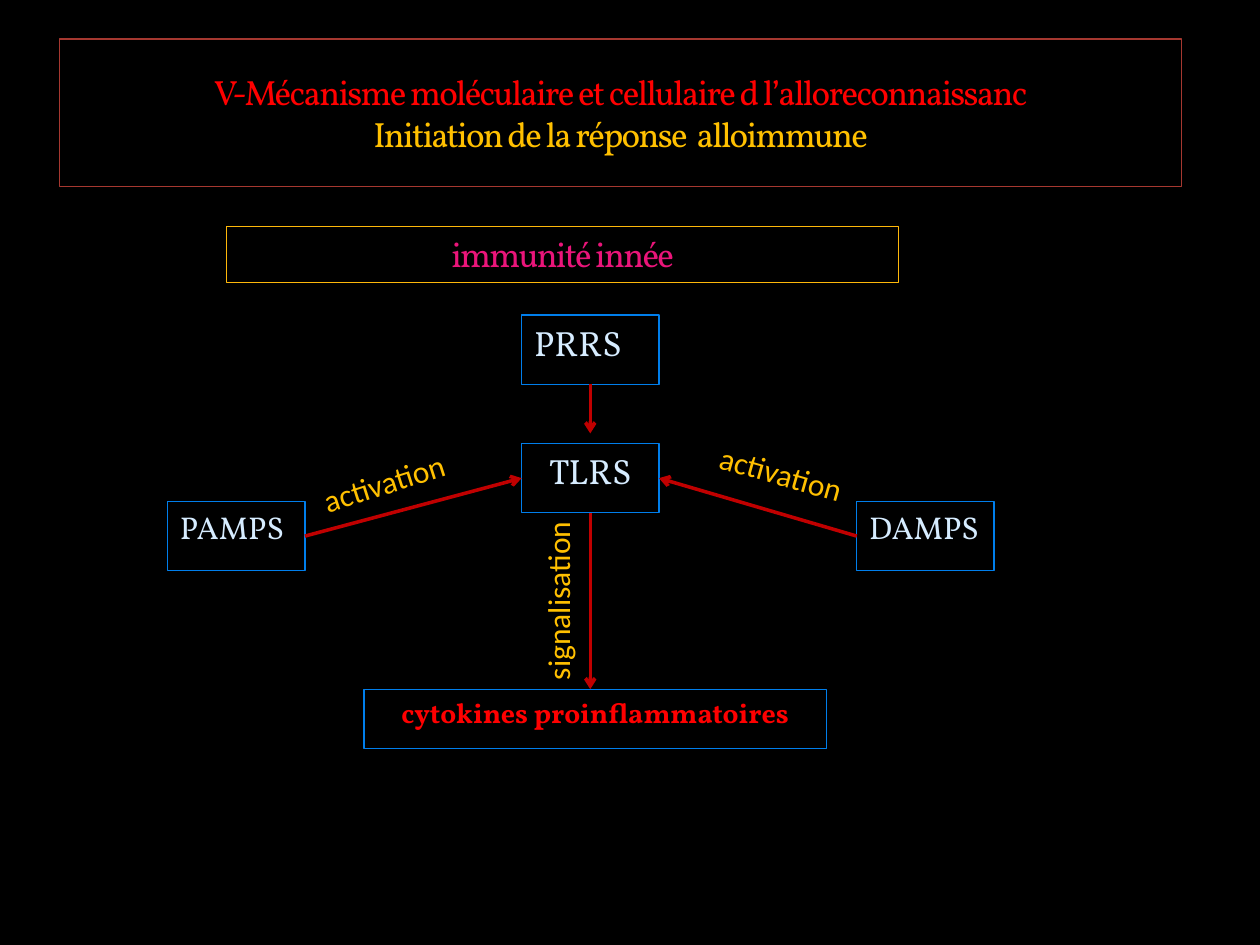
from dataclasses import dataclass

from lxml import etree
from pptx import Presentation, util as u
from pptx.dml.color import RGBColor
from pptx.enum import shapes, text
from pptx.oxml.ns import qn

COLUMNS, ROWS = 100, 75
CELL = u.Inches(0.1)
TOP, LEFT, BOTTOM, RIGHT = range(4)
CENTER, START = text.PP_ALIGN.CENTER, text.PP_ALIGN.LEFT


@dataclass(frozen=True)
class Theme:
    background: str = "000000"
    heading: str = "FF0000"
    accent: str = "FFC000"
    topic: str = "EA157A"
    receptor: str = "D6ECFF"
    box_line: str = "007EEB"
    title_line: str = "A63830"
    topic_line: str = "FEB80A"
    arrow: str = "C00000"
    serif: str = "Vollkorn"
    sans: str = "Calibri"
    large: int = 20
    medium: int = 18
    small: int = 16


THEME = Theme()


def cells(*counts):
    return [round(count * CELL) for count in counts]


def rgb(code):
    return RGBColor.from_string(code)


def write(paragraph, words, size, color, font=THEME.serif, align=START,
          bold=False, tight=False):
    """Add one run; tight draws the letters one point closer."""
    paragraph.alignment = align
    run = paragraph.add_run()
    run.text = words
    run.font.name = font
    run.font.size = u.Pt(size)
    run.font.bold = bold
    run.font.color.rgb = rgb(color)
    if tight:
        run.font._element.set("spc", "-100")


def add_box(slide, area, line=THEME.box_line, anchor=text.MSO_ANCHOR.TOP):
    box = slide.shapes.add_shape(shapes.MSO_SHAPE.RECTANGLE, *cells(*area))
    box.shadow.inherit = False
    box.fill.background()
    box.line.color.rgb = rgb(line)
    box.line.width = u.Pt(0.75)
    box.text_frame.word_wrap = True
    box.text_frame.vertical_anchor = anchor
    return box


def add_node(slide, area, words, size, color=THEME.receptor, **style):
    node = add_box(slide, area)
    write(node.text_frame.paragraphs[0], words, size, color, **style)
    return node


def add_arrow(slide, source, side, start, end, target=None, target_side=None):
    """Draw an arrow from a side of source, joined to target if there is one."""
    arrow = slide.shapes.add_connector(
        shapes.MSO_CONNECTOR.STRAIGHT, *cells(*start, *end))
    arrow.begin_connect(source, side)
    if target is not None:
        arrow.end_connect(target, target_side)
    arrow.line.color.rgb = rgb(THEME.arrow)
    arrow.line.width = u.Pt(2)
    etree.SubElement(arrow.line._get_or_add_ln(), qn("a:tailEnd"), type="arrow")
    etree.SubElement(arrow._element.spPr, qn("a:effectLst"))


def add_label(slide, area, words, rotation, wrap=False):
    label = slide.shapes.add_textbox(*cells(*area))
    label.rotation = rotation
    frame = label.text_frame
    frame.word_wrap = wrap
    if wrap:
        frame.vertical_anchor = text.MSO_ANCHOR.MIDDLE
    else:
        frame.auto_size = text.MSO_AUTO_SIZE.SHAPE_TO_FIT_TEXT
    write(frame.paragraphs[0], words, THEME.medium, THEME.accent, THEME.sans,
          CENTER if wrap else START)


def add_headings(slide):
    title = add_box(slide, (4.7, 3.1, 89.1, 11.7), THEME.title_line,
                    text.MSO_ANCHOR.MIDDLE).text_frame
    write(title.paragraphs[0],
          "V-Mécanisme moléculaire et cellulaire d l’alloreconnaissanc",
          THEME.large, THEME.heading, align=CENTER, tight=True)
    write(title.add_paragraph(), "Initiation de la réponse  alloimmune",
          THEME.large, THEME.accent, align=CENTER, tight=True)
    topic = add_box(slide, (18, 18, 53.3, 4.4), THEME.topic_line).text_frame
    write(topic.paragraphs[0], "immunité innée", THEME.large, THEME.topic,
          align=CENTER, tight=True)


def add_pathway(slide):
    width, height = 10.9, 5.5
    middle, prrs_top, tlrs_top, ligand_top = 41.4, 25, 35.2, 39.8
    pamps_left, damps_left, cytokines_top = 13.3, 68, 54.7
    axis = middle + width / 2
    tlrs_row, ligand_row = tlrs_top + height / 2, ligand_top + height / 2

    prrs = add_node(slide, (middle, prrs_top, width, height), "PRRS", THEME.large)
    damps = add_node(slide, (damps_left, ligand_top, width, height), "DAMPS",
                     THEME.medium)
    pamps = add_node(slide, (pamps_left, ligand_top, width, height), "PAMPS",
                     THEME.medium)
    tlrs = add_node(slide, (middle, tlrs_top, width, height), "TLRS",
                    THEME.large, align=CENTER)
    add_node(slide, (28.9, cytokines_top, 36.7, 4.7), "cytokines proinflammatoires",
             THEME.small, THEME.heading, align=CENTER, bold=True)

    add_arrow(slide, prrs, BOTTOM, (axis, prrs_top + height), (axis, 34.4))
    add_arrow(slide, damps, LEFT, (damps_left, ligand_row),
              (middle + width, tlrs_row), tlrs, RIGHT)
    add_arrow(slide, pamps, RIGHT, (pamps_left + width, ligand_row),
              (middle, tlrs_row), tlrs, LEFT)
    add_arrow(slide, tlrs, BOTTOM, (axis, tlrs_top + height),
              (axis, cytokines_top))

    add_label(slide, (52.6, 35.3, 18.8, 4.5), "activation", 15.9, wrap=True)
    add_label(slide, (24.5, 36.2, 12.4, 4), "activation", 342.2)
    add_label(slide, (36.7, 45.4, 15.1, 4), "signalisation", 270)


def main():
    deck = Presentation()
    deck.slide_width, deck.slide_height = cells(COLUMNS, ROWS)
    slide = deck.slides.add_slide(deck.slide_layouts[6])
    slide.background.fill.solid()
    slide.background.fill.fore_color.rgb = rgb(THEME.background)
    add_headings(slide)
    add_pathway(slide)
    deck.save("out.pptx")


if __name__ == "__main__":
    main()
